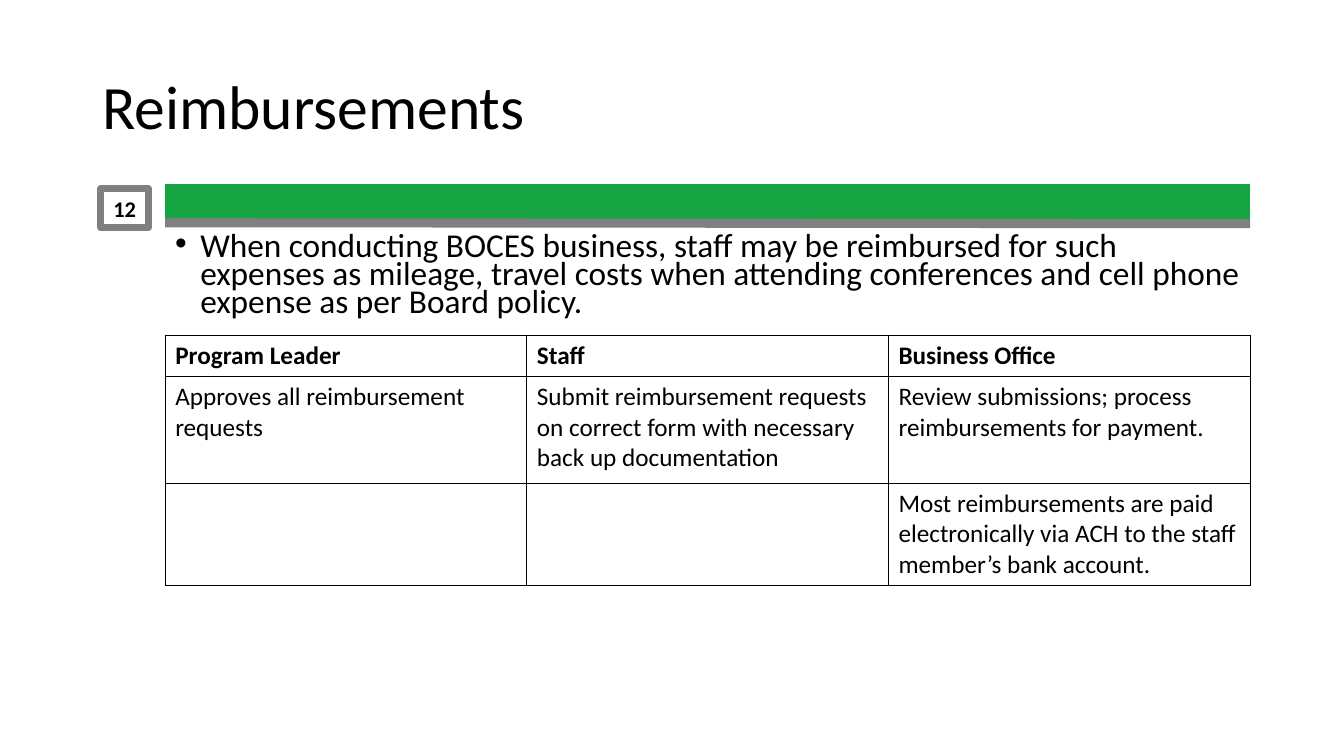
from lxml import etree
from pptx import Presentation
from pptx.dml.color import RGBColor
from pptx.enum.shapes import MSO_CONNECTOR, MSO_SHAPE
from pptx.enum.text import MSO_ANCHOR, PP_ALIGN
from pptx.oxml.ns import qn
from pptx.util import Pt

STRAIGHT, RECT = MSO_CONNECTOR.STRAIGHT, MSO_SHAPE.RECTANGLE
MIDDLE, CENTER = MSO_ANCHOR.MIDDLE, PP_ALIGN.CENTER

TITLE = "Reimbursements"
PAGE = "12"
POLICY = ("When conducting BOCES business, staff may be reimbursed for such expenses "
          "as mileage, travel costs when attending conferences and cell phone expense "
          "as per Board policy.")
ROWS = [
    ("Program Leader", "Staff", "Business Office"),
    ("Approves all reimbursement requests",
     "Submit reimbursement requests on correct form with necessary back up documentation",
     "Review submissions; process reimbursements for payment."),
    ("", "", "Most reimbursements are paid electronically via ACH to the staff "
             "member’s bank account."),
]
FONT = "Calibri"
COLORS = {"text": "000000", "green": "17A543", "grey": "808080"}
LEFT, WIDTH = 118, 775
ROW_HEIGHTS = (29.2, 76.3, 73.2)
RULES = [("green", 26.25, 144.7, 144.7), ("grey", 6.5, 159.1, 159.8)]


def rgb(name):
    return RGBColor.from_string(COLORS[name])


def add_run(p, text, size, bold=False):
    r = p.add_run()
    r.text = text
    r.font.name, r.font.size, r.font.bold = FONT, Pt(size), bold
    r.font.color.rgb = rgb("text")


def add_text(s, x, y, w, h):
    tf = s.shapes.add_textbox(Pt(x), Pt(y), Pt(w), Pt(h)).text_frame
    tf.word_wrap = True
    return tf


def add_bullet(p, indent):
    pPr = p._p.get_or_add_pPr()
    pPr.set("marL", str(Pt(indent)))
    pPr.set("indent", str(-Pt(indent)))
    etree.SubElement(pPr, qn("a:buFont")).set("typeface", "Arial")
    etree.SubElement(pPr, qn("a:buChar")).set("char", "•")


def add_rule(s, color, weight, y1, y2):
    line = s.shapes.add_connector(STRAIGHT, Pt(LEFT), Pt(y1), Pt(LEFT + WIDTH), Pt(y2))
    line.line.color.rgb, line.line.width = rgb(color), Pt(weight)
    etree.SubElement(line._element.spPr, qn("a:effectLst"))


def add_borders(cell):
    """Draw a 1 pt line on all four sides; must precede the cell's fill."""
    tcPr = cell._tc.get_or_add_tcPr()
    for side in ("a:lnL", "a:lnR", "a:lnT", "a:lnB"):
        ln = etree.SubElement(tcPr, qn(side), w=str(Pt(1)))
        fill = etree.SubElement(ln, qn("a:solidFill"))
        etree.SubElement(fill, qn("a:srgbClr"), val=COLORS["text"])


def add_duties(s, y):
    frame = s.shapes.add_table(len(ROWS), len(ROWS[0]), Pt(LEFT), Pt(y),
                               Pt(WIDTH), Pt(sum(ROW_HEIGHTS)))
    table = frame.table
    for i, (row, height) in enumerate(zip(ROWS, ROW_HEIGHTS)):
        table.rows[i].height = Pt(height)
        for j, text in enumerate(row):
            cell = table.cell(i, j)
            add_borders(cell)
            cell.fill.background()
            if text:
                add_run(cell.text_frame.paragraphs[0], text, 18, bold=i == 0)


def main():
    prs = Presentation()
    prs.slide_width, prs.slide_height = Pt(960), Pt(540)
    s = prs.slides.add_slide(prs.slide_layouts[6])

    tf = add_text(s, 66, 26, 828, 104.4)
    tf.vertical_anchor = MIDDLE
    p = tf.paragraphs[0]
    p.line_spacing = 0.9
    add_run(p, TITLE, 44)

    p = add_text(s, LEFT, 164.2, WIDTH, 71.3).paragraphs[0]
    p.line_spacing, p.space_before = 0.7, Pt(10)
    add_bullet(p, 18)
    add_run(p, POLICY, 23.8)

    for rule in RULES:
        add_rule(s, *rule)

    box = s.shapes.add_shape(RECT, Pt(72), Pt(134.8), Pt(34), Pt(28))
    box.shadow.inherit = False
    box.fill.background()
    box.line.color.rgb, box.line.width = rgb("grey"), Pt(4.75)
    box.text_frame.vertical_anchor = MIDDLE
    p = box.text_frame.paragraphs[0]
    p.alignment = CENTER
    add_run(p, PAGE, 16, bold=True)

    add_duties(s, 239.6)
    prs.save("out.pptx")


if __name__ == "__main__":
    main()
